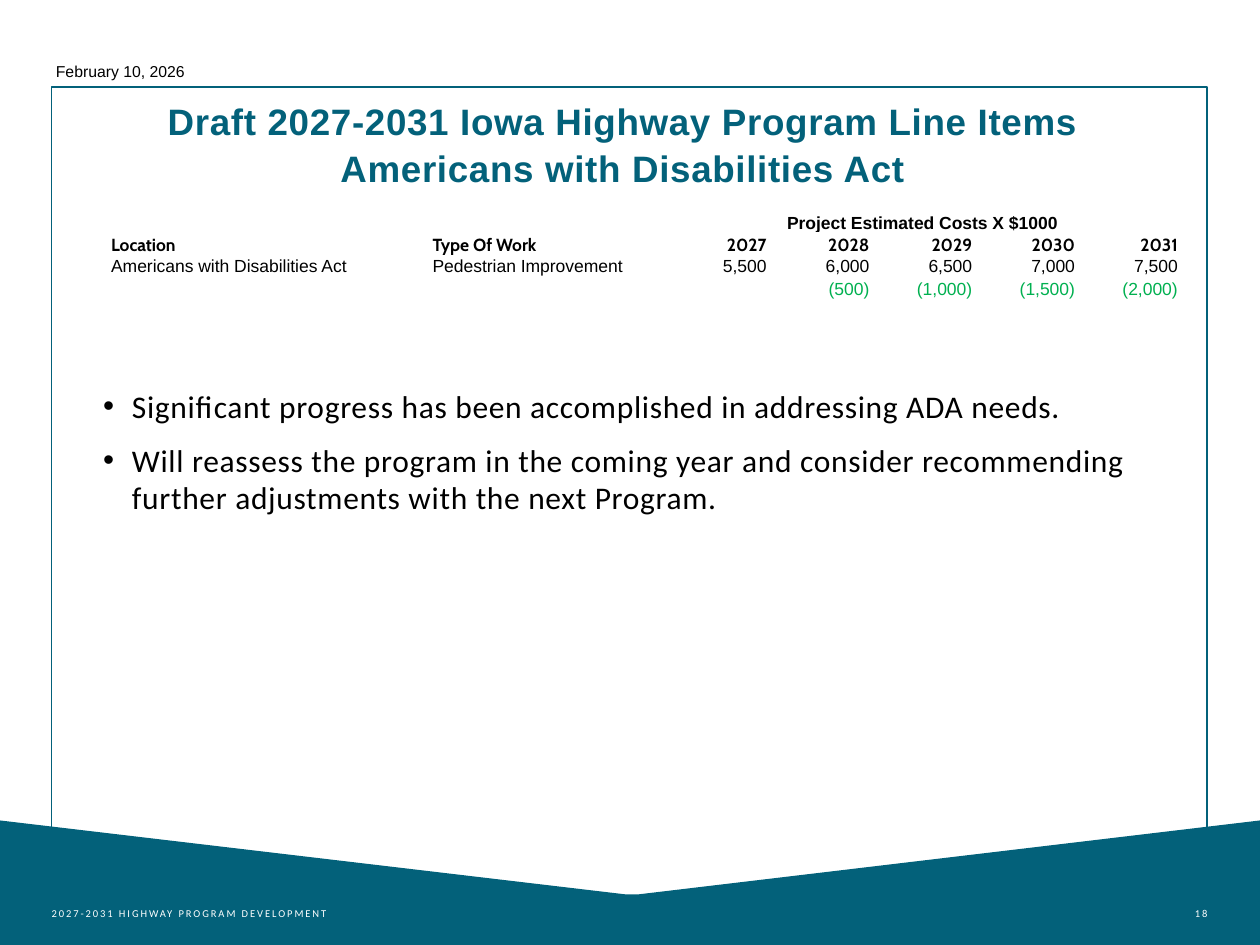
from lxml.etree import SubElement
from pptx import Presentation
from pptx.dml.color import RGBColor as Rgb
from pptx.enum.shapes import MSO_SHAPE as Form
from pptx.enum.text import MSO_ANCHOR as Anchor, PP_ALIGN as Align
from pptx.oxml.ns import qn
from pptx.util import Cm, Pt

HUES = {"teal": "03617A", "white": "FFFFFF", "black": "000000", "green": "00B050"}
YEARS = ["2027", "2028", "2029", "2030", "2031"]
ROWS = [
    ["", "", "Project Estimated Costs X $1000", "", "", "", ""],
    ["Location", "Type Of Work", *YEARS],
    ["Americans with Disabilities Act", "Pedestrian Improvement",
     "5,500", "6,000", "6,500", "7,000", "7,500"],
    ["", "", "", "(500)", "(1,000)", "(1,500)", "(2,000)"],
]


def hue(name):
    """Return the named colour."""
    return Rgb.from_string(HUES[name])


def write(para, text, size, face="Arial", tint="black", bold=False, gap=0):
    """Add one styled run to a paragraph."""
    run = para.add_run()
    run.text = text
    font = run.font
    font.size, font.name, font.bold = Pt(size), face, bold
    font.color.rgb = hue(tint)
    if gap:
        run._r.get_or_add_rPr().set("spc", str(round(gap * 100)))


def inset(item, left, top, right, low):
    """Set the inner margins of a frame or cell, in centimetres."""
    item.margin_left, item.margin_top = Cm(left), Cm(top)
    item.margin_right, item.margin_bottom = Cm(right), Cm(low)


def place(shape, box):
    """Move a shape to a box given in centimetres."""
    shape.left, shape.top, shape.width, shape.height = map(Cm, box)


def label(slide, box):
    """Add a text box and return its frame."""
    return slide.shapes.add_textbox(*map(Cm, box)).text_frame


def draw_band(slide, box):
    """Draw the notched band across the foot of the slide."""
    x, y, w, h = box
    notch = y + 1.49
    points = [(x + w, y), (x + w, y + h), (x, y + h), (x, y),
              (x + 12.6, notch), (x + 12.88, notch)]
    pen = slide.shapes.build_freeform(Cm(points[0][0]), Cm(points[0][1]))
    pen.add_line_segments([(Cm(a), Cm(b)) for a, b in points[1:]], close=True)
    band = pen.convert_to_shape()
    band.shadow.inherit = False
    band.fill.solid()
    band.fill.fore_color.rgb = hue("teal")
    band.line.fill.background()


def draw_frame(slide, box):
    """Draw the thin outline around the content."""
    frame = slide.shapes.add_shape(Form.RECTANGLE, *map(Cm, box))
    frame.shadow.inherit = False
    frame.fill.background()
    frame.line.color.rgb = hue("teal")
    frame.line.width = Pt(1)


def fill_foot(slide, box):
    """Write the programme name and the page number at the two ends."""
    x, y, w, h = box
    left, right = (x, y, 6.78, h), (x + w - 2.46, y, 2.46, h)
    for part, text, side in [
        (left, "2027-2031 HIGHWAY PROGRAM DEVELOPMENT", Align.LEFT),
        (right, "18", Align.RIGHT),
    ]:
        frame = label(slide, part)
        frame.word_wrap = True
        frame.vertical_anchor = Anchor.BOTTOM
        inset(frame, 0, 0.13, 0, 0.13)
        para = frame.paragraphs[0]
        para.alignment = side
        write(para, text, 6, "Calibri", "white", gap=1.1)


def fill_date(slide, box):
    """Write the date above the frame."""
    frame = label(slide, box)
    frame.word_wrap = False
    para = frame.paragraphs[0]
    para.alignment = Align.CENTER
    write(para, "February 10, 2026", 9)


def fill_title(shape, box):
    """Write the two centred title lines."""
    place(shape, box)
    frame = shape.text_frame
    frame.vertical_anchor = Anchor.TOP
    inset(frame, 0, 0.13, 0.25, 0.13)
    lines = ["Draft 2027-2031 Iowa Highway Program Line Items",
             "Americans with Disabilities Act"]
    for i, line in enumerate(lines):
        para = frame.add_paragraph() if i else frame.paragraphs[0]
        para.alignment = Align.CENTER
        para.line_spacing = 1.07
        para.space_before = Pt(0)
        write(para, line, 21, tint="teal", bold=True, gap=0.4)


def fill_list(shape, box):
    """Write the bulleted remarks."""
    place(shape, box)
    frame = shape.text_frame
    inset(frame, 0, 0.13, 0.25, 0.13)
    notes = ["Significant progress has been accomplished in addressing ADA needs.",
             "Will reassess the program in the coming year and consider "
             "recommending further adjustments with the next Program."]
    for i, note in enumerate(notes):
        para = frame.add_paragraph() if i else frame.paragraphs[0]
        props = para._p.get_or_add_pPr()
        props.set("marL", str(Cm(0.58)))
        props.set("indent", str(-Cm(0.58)))
        SubElement(props, qn("a:buFont"), typeface="Arial")
        SubElement(props, qn("a:buChar"), char="•")
        para.space_before = Pt(9 if i else 0)
        write(para, note, 18, "Calibri", gap=0.4)


def fill_cell(cell, row, col, text):
    """Style one table cell and write its text."""
    inset(cell, 0.03, 0.03, 0.03, 0)
    if row == 1:
        cell.fill.solid()
        cell.fill.fore_color.rgb = hue("white")
    else:
        cell.fill.background()
    para = cell.text_frame.paragraphs[0]
    if not text:
        SubElement(para._p, qn("a:endParaRPr"), sz="1000")
        return
    if row == 0:
        para.alignment = Align.CENTER
        cell.vertical_anchor = Anchor.BOTTOM
    else:
        para.alignment = Align.RIGHT if col > 1 else Align.LEFT
    write(para, text, 10, "Cabin" if row == 1 else "Arial",
          "green" if row == 3 else "black", row < 2)


def add_costs(slide, box):
    """Build the table of project costs by year."""
    table = slide.shapes.add_table(len(ROWS), len(ROWS[0]), *map(Cm, box)).table
    table.first_row = table.horz_banding = False
    wide = [6.48, 4.72]
    year = (box[2] - sum(wide)) / len(YEARS)
    for col, width in zip(table.columns, wide + [year] * len(YEARS)):
        col.width = Cm(width)
    for row, high in zip(table.rows, [0.48, 0.44, 0.44, 0.44]):
        row.height = Cm(high)
    for i, row in enumerate(ROWS):
        for j, text in enumerate(row):
            fill_cell(table.cell(i, j), i, j, text)
    table.cell(0, 2).merge(table.cell(0, 6))


def main():
    """Build and save the slide."""
    deck = Presentation()
    deck.slide_width, deck.slide_height = Cm(25.4), Cm(19.05)
    slide = deck.slides.add_slide(deck.slide_layouts[1])
    draw_band(slide, (0, 16.54, 25.4, 2.51))
    draw_frame(slide, (1.04, 1.75, 23.3, 16.92))
    fill_foot(slide, (1.04, 17.65, 23.3, 1.02))
    fill_date(slide, (0.81, 1.12, 3.23, 0.64))
    fill_title(slide.shapes.title, (2.08, 1.8, 21.2, 2.11))
    fill_list(slide.placeholders[1], (2.08, 7.67, 21.2, 7.82))
    add_costs(slide, (2.21, 4.22, 21.56, 1.8))
    deck.save("out.pptx")


if __name__ == "__main__":
    main()
